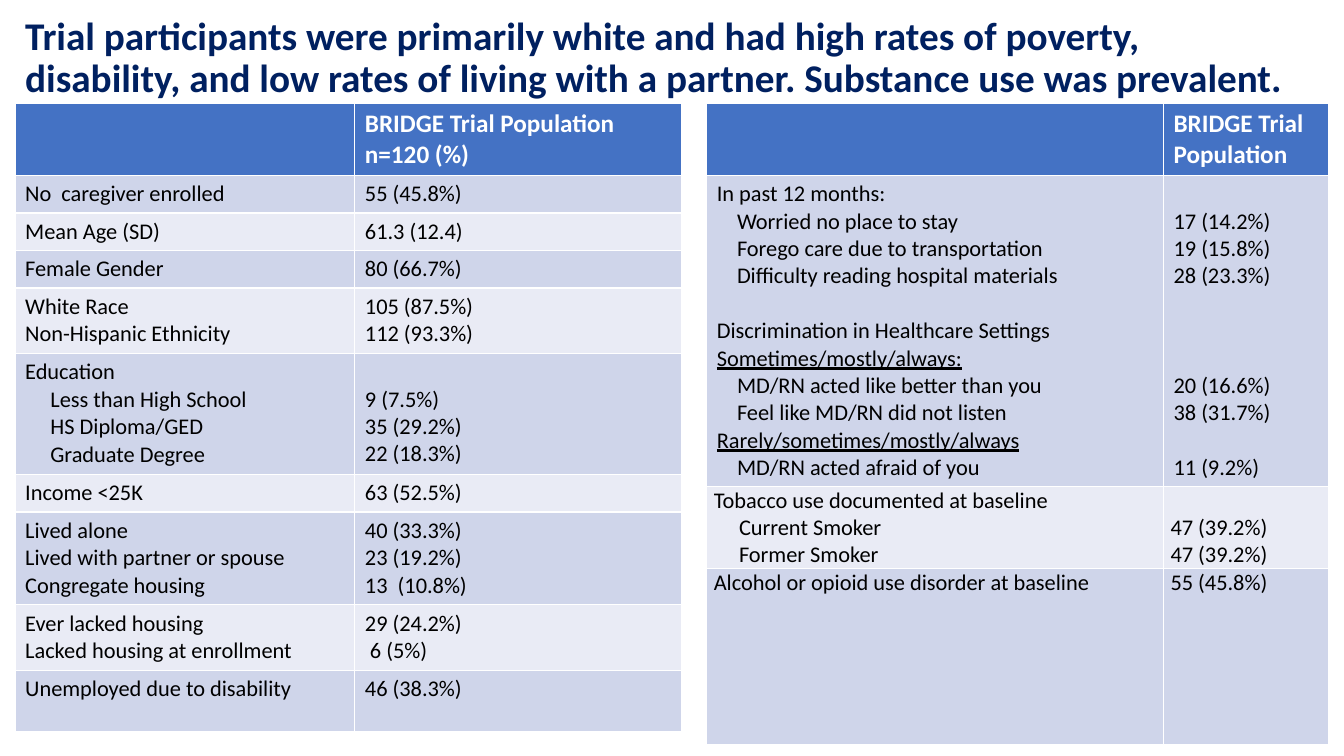
from pptx import Presentation
from pptx.dml.color import RGBColor
from pptx.enum.text import MSO_ANCHOR, MSO_AUTO_SIZE, PP_ALIGN
from pptx.util import Inches, Pt

COLORS = {
    "title": "002060",
    "header": "4472C4",
    "header_text": "FFFFFF",
    "odd_band": "CFD5EA",
    "even_band": "E9EBF5",
    "body_text": "000000",
}
LINE_PITCH = 19.5
UNDERLINED = {"Sometimes/mostly/always:", "Rarely/sometimes/mostly/always"}


def style_runs(paragraph, size, color, bold):
    for run in paragraph.runs:
        run.font.name = "Calibri"
        run.font.size = Pt(size)
        run.font.bold = bold
        run.font.color.rgb = RGBColor.from_string(COLORS[color])
        if run.text in UNDERLINED:
            run.font.underline = True


def fill_cell(cell, lines, fill, size, color, bold):
    cell.fill.solid()
    cell.fill.fore_color.rgb = RGBColor.from_string(COLORS[fill])
    skipped, started = 0, False
    for text, indent in lines:
        if not text:
            skipped += 1
            continue
        paragraph = cell.text_frame.add_paragraph() if started else cell.text_frame.paragraphs[0]
        paragraph.text = text
        if indent:
            paragraph._p.get_or_add_pPr().set("marL", str(Inches(indent)))
        if skipped and started:
            paragraph.space_before = Pt(skipped * LINE_PITCH)
        elif skipped:
            cell.margin_top += Pt(skipped * LINE_PITCH)
        style_runs(paragraph, size, color, bold)
        skipped, started = 0, True


demographics = [
    (0.37, [("No  caregiver enrolled", "55 (45.8%)", 0)]),
    (0.37, [("Mean Age (SD)", "61.3 (12.4)", 0)]),
    (0.37, [("Female Gender", "80 (66.7%)", 0)]),
    (0.65, [("White Race", "105 (87.5%)", 0),
            ("Non-Hispanic Ethnicity", "112 (93.3%)", 0)]),
    (1.2, [("Education", "", 0),
           ("Less than High School", "9 (7.5%)", 0.25),
           ("HS Diploma/GED", "35 (29.2%)", 0.25),
           ("Graduate Degree", "22 (18.3%)", 0.25)]),
    (0.37, [("Income <25K", "63 (52.5%)", 0)]),
    (0.92, [("Lived alone", "40 (33.3%)", 0),
            ("Lived with partner or spouse", "23 (19.2%)", 0),
            ("Congregate housing", "13  (10.8%)", 0)]),
    (0.65, [("Ever lacked housing", "29 (24.2%)", 0),
            ("Lacked housing at enrollment", " 6 (5%)", 0)]),
    (0.61, [("Unemployed due to disability", "46 (38.3%)", 0)]),
]
barriers_and_substances = [
    (3.08, [("In past 12 months:", "", 0),
            ("Worried no place to stay", "17 (14.2%)", 0.2),
            ("Forego care due to transportation", "19 (15.8%)", 0.2),
            ("Difficulty reading hospital materials", "28 (23.3%)", 0.2),
            ("", "", 0),
            ("Discrimination in Healthcare Settings", "", 0),
            ("Sometimes/mostly/always:", "", 0),
            ("MD/RN acted like better than you", "20 (16.6%)", 0.2),
            ("Feel like MD/RN did not listen", "38 (31.7%)", 0.2),
            ("Rarely/sometimes/mostly/always", "", 0),
            ("MD/RN acted afraid of you", "11 (9.2%)", 0.2)]),
    (0.81, [("Tobacco use documented at baseline", "", 0),
            ("Current Smoker", "47 (39.2%)", 0.25),
            ("Former Smoker", "47 (39.2%)", 0.25)]),
    (1.74, [("Alcohol or opioid use disorder at baseline", "55 (45.8%)", 0)]),
]
populations = [
    (0.15, (3.37, 3.24), 0.68, ["BRIDGE Trial Population", "n=120 (%)"], demographics, 10),
    (7.01, (4.53, 1.64), 0.7, ["BRIDGE Trial Population"], barriers_and_substances, 2),
]

prs = Presentation()
prs.slide_width, prs.slide_height = Inches(13.33), Inches(7.5)
slide = prs.slides.add_slide(prs.slide_layouts[5])

title = slide.shapes.title
title.left, title.top = Inches(0.15), Inches(-0.14)
title.width, title.height = Inches(12.76), Inches(1.45)
title.text_frame.text = (
    "Trial participants were primarily white and had high rates of poverty, "
    "disability, and low rates of living with a partner. Substance use was prevalent."
)
title.text_frame.word_wrap = True
title.text_frame.auto_size = MSO_AUTO_SIZE.NONE
title.text_frame.vertical_anchor = MSO_ANCHOR.MIDDLE
heading = title.text_frame.paragraphs[0]
heading.alignment = PP_ALIGN.LEFT
heading.line_spacing = 0.9
style_runs(heading, 28, "title", True)

for left, widths, header_height, header, groups, first_tight_row in populations:
    heights = [header_height] + [height for height, _ in groups]
    table = slide.shapes.add_table(
        len(heights), 2, Inches(left), Inches(1.03),
        Inches(sum(widths)), Inches(sum(heights)),
    ).table
    for column, width in zip(table.columns, widths):
        column.width = Inches(width)
    for row, height in zip(table.rows, heights):
        row.height = Inches(height)

    header_cells = ([], [(text, 0) for text in header])
    for column, lines in enumerate(header_cells):
        fill_cell(table.cell(0, column), lines, "header", 18, "header_text", True)

    for row, (_, group) in enumerate(groups, start=1):
        band = "odd_band" if row % 2 else "even_band"
        labels = [(label, indent) for label, _, indent in group]
        values = [(value, 0) for _, value, _ in group]
        for column, lines in enumerate((labels, values)):
            cell = table.cell(row, column)
            if row >= first_tight_row:
                cell.margin_left = cell.margin_right = Inches(0.07)
                cell.margin_top = cell.margin_bottom = Inches(0)
            fill_cell(cell, lines, band, 16, "body_text", False)

prs.save("out.pptx")
